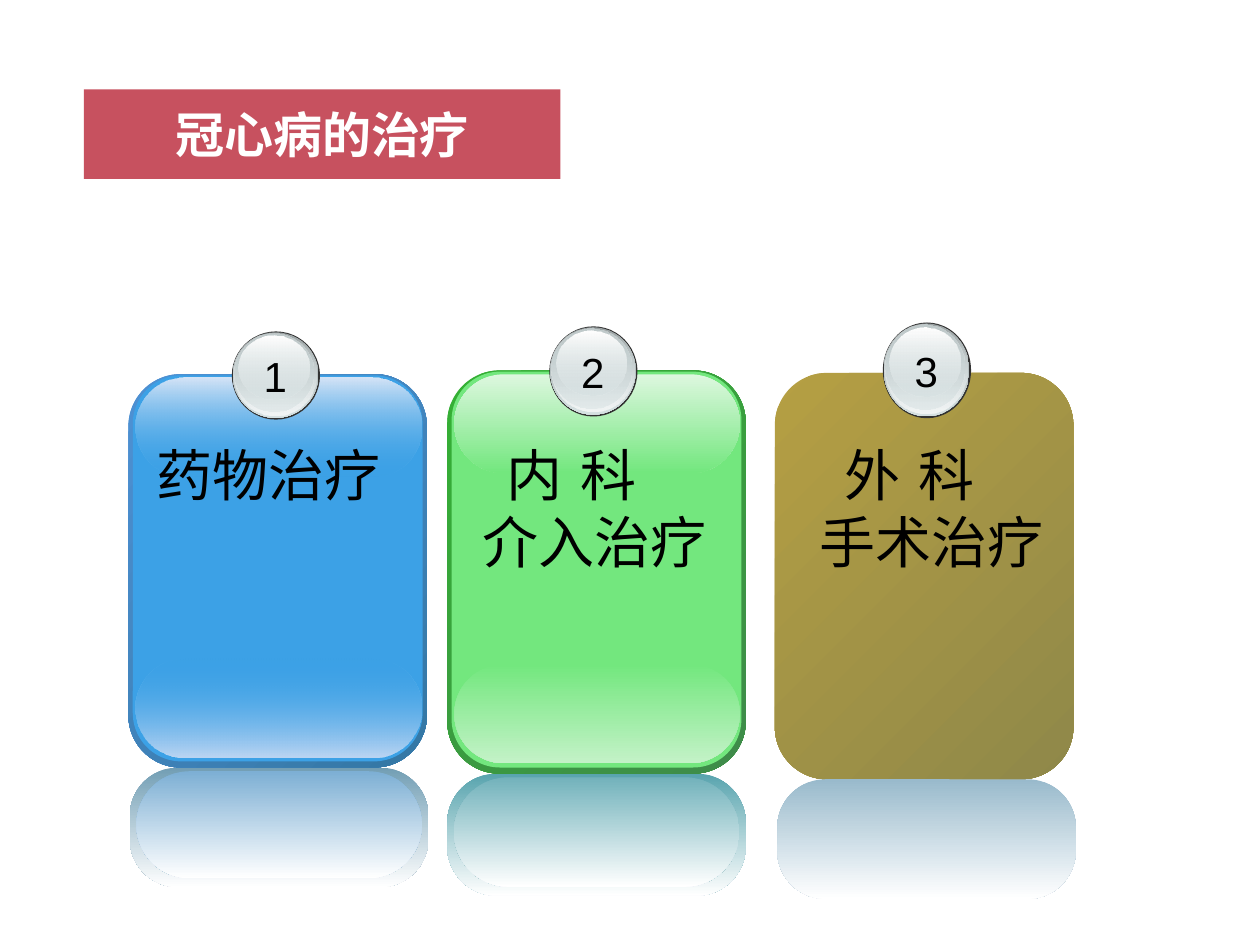
"""Build the slide on the three ways to treat coronary heart disease."""
import pptx
import pptx.dml.color
import pptx.enum.shapes
import pptx.enum.text
import pptx.oxml
import pptx.oxml.ns
import pptx.util
from dataclasses import dataclass

Pt = pptx.util.Pt
RGB = pptx.dml.color.RGBColor
SHAPES = pptx.enum.shapes.MSO_SHAPE
ALIGN = pptx.enum.text.PP_ALIGN
qn = pptx.oxml.ns.qn

WHITE = RGB(0xFF, 0xFF, 0xFF)
BLACK = RGB(0, 0, 0)
RED = RGB(0xC7, 0x51, 0x5F)
CHARCOAL = RGB(0x33, 0x33, 0x33)
STEEL = RGB(0x99, 0xA1, 0xA2)
SILVER = RGB(0xD6, 0xE1, 0xE2)
PEARL = RGB(0xF2, 0xF5, 0xF5)
ASH = RGB(0xC1, 0xCB, 0xCC)
BLUE = RGB(0x3C, 0xA1, 0xE6)
BLUE_EDGE = (RGB(0x4E, 0x91, 0xD4), RGB(0x34, 0x77, 0xA4))
BLUE_SHINE = (RGB(0xD7, 0xE5, 0xF7), RGB(0xBD, 0xD6, 0xF3))
BLUE_MIRROR = (RGB(0x72, 0x9E, 0xB4), RGB(0x7D, 0xAF, 0xD4))
GREEN = RGB(0x73, 0xE7, 0x7E)
GREEN_EDGE = (RGB(0x34, 0xB0, 0x34), RGB(0x3F, 0x8B, 0x4A))
GREEN_SHINE = (RGB(0xDD, 0xF7, 0xDF), RGB(0xC3, 0xF2, 0xC7))
GREEN_MIRROR = (RGB(0x58, 0xA4, 0xAE), RGB(0x72, 0xB2, 0xBB))
OLIVE_EDGE = (RGB(0xB5, 0x9F, 0x43), RGB(0x8F, 0x88, 0x49))
OLIVE_MIRROR = (RGB(0x99, 0xBA, 0xCC),)

CARD_WIDTH = 170.6
GLOSS_WIDTH = 163.2
GLOSS_HEIGHT = 56.5
BADGE_WIDTH = 50.4
BADGE_RINGS = [
    ((0, 0, 1, 1), (CHARCOAL,), (100, 100)),
    ((0.01, 0.01, 0.97, 0.97), (STEEL, SILVER), (100, 100)),
    ((0.02, 0.01, 0.94, 0.94), (SILVER, PEARL), (0, 100)),
    ((0.03, 0.02, 0.9, 0.89), (ASH, SILVER), (100, 48)),
    ((0.08, 0.05, 0.8, 0.72), (WHITE, SILVER), (100, 38)),
]


@dataclass
class Card:
    """Hold the place, colours and wording of one treatment card."""
    number: str
    lines: list
    left: float
    top: float
    height: float
    edge: tuple
    mirror: tuple
    mirror_left: float
    mirror_height: float
    badge: tuple
    label_top: float
    text_left: float
    panel: RGB = None
    shine: tuple = None
    fade: int = 100


def paint(shape, colors, alphas=(100, 100), angle=90):
    """Fill a shape with one colour or a two-stop gradient."""
    if len(colors) == 1:
        shape.fill.solid()
        shape.fill.fore_color.rgb = colors[0]
        return
    shape.fill.gradient()
    shape.fill.gradient_angle = 360 - angle
    for stop, color in zip(shape.fill.gradient_stops, colors):
        stop.color.rgb = color
    for node, alpha in zip(shape.element.iter(qn("a:srgbClr")), alphas):
        if alpha < 100:
            node.append(pptx.oxml.parse_xml(
                f'<a:alpha {pptx.oxml.ns.nsdecls("a")} val="{alpha * 1000}"/>'))


def add_plate(page, kind, bounds, colors, corner=None, **look):
    """Add a borderless, painted preset shape."""
    shape = page.shapes.add_shape(kind, *map(Pt, bounds))
    shape.shadow.inherit = False
    shape.line.fill.background()
    if corner is not None:
        shape.adjustments[0] = corner
    paint(shape, colors, **look)
    return shape


def write(para, text, size, font, color=BLACK, bold=False, align=None, indent=0):
    """Put formatted text into a paragraph."""
    para.alignment = align
    if indent:
        para._p.get_or_add_pPr().set("marL", str(Pt(indent)))
    span = para.add_run()
    span.text = text
    span.font.size = Pt(size)
    span.font.name = font
    span.font.bold = bold
    span.font.color.rgb = color
    east = pptx.oxml.parse_xml(
        f'<a:ea {pptx.oxml.ns.nsdecls("a")} typeface="{font}"/>')
    span.font._element.find(qn("a:latin")).addnext(east)


def add_text(page, bounds, lines, wrap=True, **style):
    """Add a text box with one paragraph for each (text, indent) line."""
    box = page.shapes.add_textbox(*map(Pt, bounds))
    frame = box.text_frame
    frame.word_wrap = wrap
    for index, (text, indent) in enumerate(lines):
        para = frame.add_paragraph() if index else frame.paragraphs[0]
        write(para, text, indent=indent, **style)


def add_title(page, text):
    """Turn the title placeholder into the red banner."""
    title = page.shapes.title
    title.left, title.top, title.width, title.height = map(Pt, (48, 51.1, 272.2, 51.1))
    geometry = pptx.oxml.parse_xml(
        f'<a:prstGeom {pptx.oxml.ns.nsdecls("a")} prst="flowChartAlternateProcess">'
        '<a:avLst/></a:prstGeom>')
    title.element.spPr.find(qn("a:xfrm")).addnext(geometry)
    paint(title, (RED,))
    title.text_frame.vertical_anchor = pptx.enum.text.MSO_ANCHOR.MIDDLE
    write(title.text_frame.paragraphs[0], text, 28, "Noto Sans CJK SC",
          color=WHITE, bold=True, align=ALIGN.CENTER)


def add_badge(page, card):
    """Add the numbered glass button of a card."""
    left, top, height = card.badge
    for (x, y, wide, high), colors, alphas in BADGE_RINGS:
        bounds = (left + x * BADGE_WIDTH, top + y * height,
                  wide * BADGE_WIDTH, high * height)
        add_plate(page, SHAPES.OVAL, bounds, colors, alphas=alphas)
    add_text(page, (left + 10.8, card.label_top, 28, 36), [(card.number, 0)],
             wrap=False, size=24, font="Arial", align=ALIGN.CENTER)


def add_card(page, card):
    """Add a glossy card with its reflection, badge and wording."""
    rounded = SHAPES.ROUNDED_RECTANGLE
    left, top, bottom = card.left, card.top, card.top + card.height
    add_plate(page, rounded, (left, top, CARD_WIDTH, card.height), card.edge,
              corner=0.175, angle=45)
    if card.panel:
        add_plate(page, rounded, (left + 2.5, top + 0.7, 165.6, card.height - 4.2),
                  (card.panel,), corner=0.167)
        upper, lower = card.shine
        add_plate(page, rounded,
                  (left + 4, bottom - 6 - GLOSS_HEIGHT, GLOSS_WIDTH, GLOSS_HEIGHT),
                  (card.panel, lower), corner=0.5, alphas=(card.fade, 100))
        add_plate(page, rounded, (left + 4, top + 2.2, GLOSS_WIDTH, GLOSS_HEIGHT),
                  (upper, card.panel), corner=0.5, alphas=(100, card.fade))
    mirror_left, mirror_height = card.mirror_left, card.mirror_height
    add_plate(page, rounded, (mirror_left, bottom, CARD_WIDTH, mirror_height),
              (card.mirror[0], WHITE), corner=0.404)
    for color in card.mirror[1:]:
        add_plate(page, rounded,
                  (mirror_left + 3.7, bottom + 2.1, GLOSS_WIDTH, mirror_height - 7.2),
                  (color, WHITE), corner=0.5)
    add_badge(page, card)
    add_text(page, (card.text_left, 248, 162, 46 if len(card.lines) == 1 else 85),
             card.lines, size=32, font="DejaVu Sans")


def main():
    """Assemble and save the deck."""
    deck = pptx.Presentation()
    deck.slide_width, deck.slide_height = Pt(720), Pt(540)
    page = deck.slides.add_slide(deck.slide_layouts[5])
    add_title(page, "冠心病的治疗")
    cards = [
        Card("1", [("药物治疗", 0)], 73.4, 213.8, 224.8, BLUE_EDGE, BLUE_MIRROR,
             74.2, 68.4, (132.5, 189.4, 50.4), 196.6, 82.1, BLUE, BLUE_SHINE, 0),
        Card("2", [("内 科", 21), ("介入治疗", 7)], 255.6, 211.7, 230.4, GREEN_EDGE,
             GREEN_MIRROR, 255.6, 69.8, (313.9, 186.5, 51.5), 194.2, 261.4,
             GREEN, GREEN_SHINE),
        Card("3", [("外 科", 21), ("手术治疗", 7)], 442.8, 213.1, 232.2, OLIVE_EDGE,
             OLIVE_MIRROR, 444.2, 68.4, (504.5, 184.3, 54.7), 193.9, 454.3),
    ]
    for card in cards:
        add_card(page, card)
    deck.save("out.pptx")


if __name__ == "__main__":
    main()
